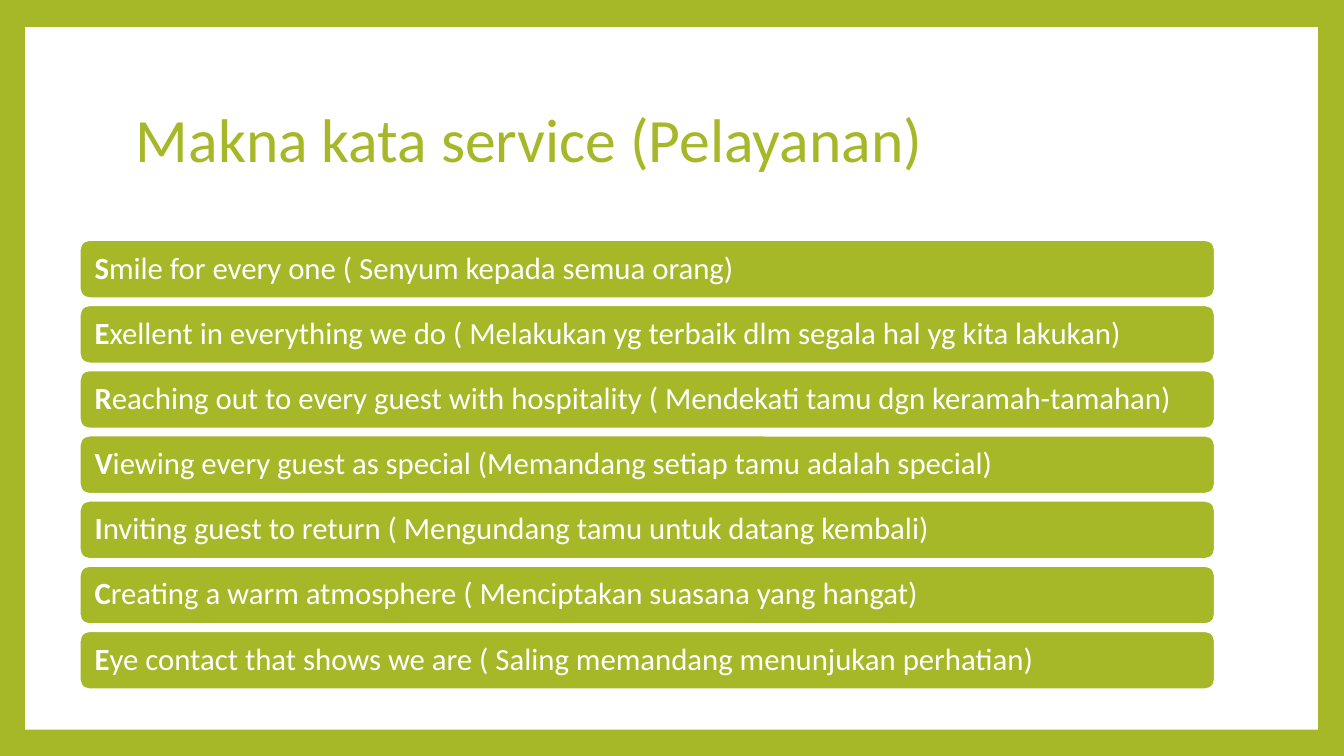
import pptx
import pptx.util
import pptx.dml.color
import pptx.enum.shapes
import pptx.enum.text

Inches = pptx.util.Inches
Pt = pptx.util.Pt
KIND = pptx.enum.shapes.MSO_SHAPE

HUES = {"green": "A6B727", "white": "FFFFFF"}
LINES = [
    "Smile for every one ( Senyum kepada semua orang)",
    "Exellent in everything we do ( Melakukan yg terbaik dlm segala hal yg kita lakukan)",
    "Reaching out to every guest with hospitality ( Mendekati tamu dgn keramah-tamahan)",
    "Viewing every guest as special (Memandang setiap tamu adalah special)",
    "Inviting guest to return ( Mengundang tamu untuk datang kembali)",
    "Creating a warm atmosphere ( Menciptakan suasana yang hangat)",
    "Eye contact that shows we are ( Saling memandang menunjukan perhatian)",
]


def hue(name):
    return pptx.dml.color.RGBColor.from_string(HUES[name])


def write(shape, text, size=22, color="white", lead=0, inset=0.1):
    """Fill a shape with one paragraph whose first `lead` letters are bold."""
    frame = shape.text_frame
    frame.word_wrap = True
    frame.vertical_anchor = pptx.enum.text.MSO_ANCHOR.MIDDLE
    frame.margin_left = frame.margin_right = Inches(inset)
    para = frame.paragraphs[0]
    para.alignment = pptx.enum.text.PP_ALIGN.LEFT
    para.line_spacing = 0.9
    for part, bold in ((text[:lead], True), (text[lead:], False)):
        if part:
            run = para.add_run()
            run.text = part
            run.font.name = "Calibri"
            run.font.size = Pt(size)
            run.font.bold = bold
            run.font.color.rgb = hue(color)


def panel(slide, kind, box, fill):
    shape = slide.shapes.add_shape(kind, *map(Inches, box))
    shape.shadow.inherit = False
    shape.fill.solid()
    shape.fill.fore_color.rgb = hue(fill)
    shape.line.fill.background()
    return shape


def frame(slide, box):
    # Green border around a white page
    slide.background.fill.solid()
    slide.background.fill.fore_color.rgb = hue("green")
    panel(slide, KIND.RECTANGLE, box, "white")


def title(slide, box, text):
    head = slide.shapes.add_textbox(*map(Inches, box))
    write(head, text, size=44, color="green")


def bars(slide, box, lines, high=0.58):
    # Equal bars spread over the height of the box
    left, top, wide, tall = box
    step = (tall - high) / (len(lines) - 1)
    for i, text in enumerate(lines):
        bar = panel(slide, KIND.ROUNDED_RECTANGLE,
                    (left, top + i * step, wide, high), "green")
        bar.line.color.rgb = hue("white")
        bar.line.width = Pt(1.5)
        write(bar, text, lead=1, inset=0.12)


def main():
    deck = pptx.Presentation()
    deck.slide_width = Inches(13.33)
    deck.slide_height = Inches(7.5)
    slide = deck.slides.add_slide(deck.slide_layouts[6])
    frame(slide, (0.25, 0.27, 12.82, 6.97))
    title(slide, (1.25, 0.67, 10.8, 1.48), "Makna kata service (Pelayanan)")
    bars(slide, (0.79, 2.38, 11.26, 4.46), LINES)
    deck.save("out.pptx")


if __name__ == "__main__":
    main()
